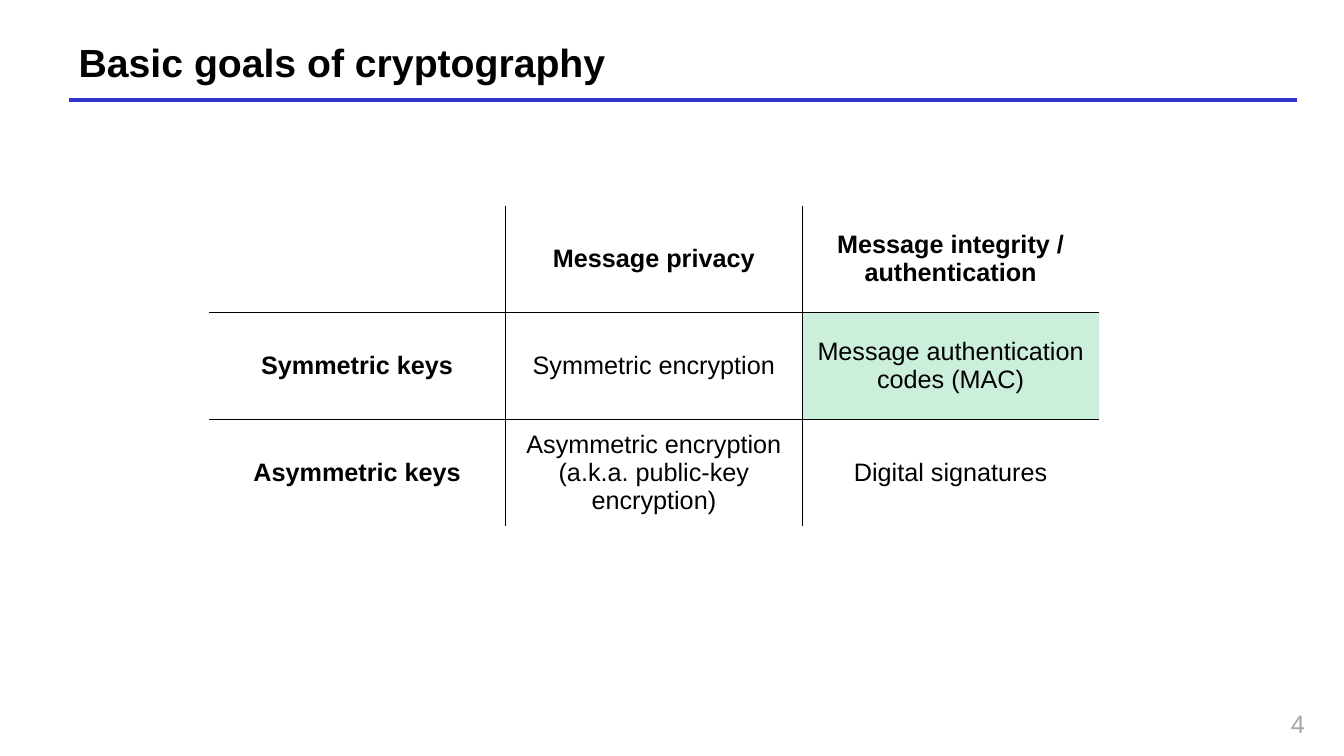
from lxml import etree
from pptx import Presentation
from pptx.dml.color import RGBColor
from pptx.enum.shapes import MSO_CONNECTOR
from pptx.enum.text import MSO_ANCHOR, MSO_AUTO_SIZE, PP_ALIGN
from pptx.oxml.ns import qn
from pptx.util import Inches, Pt

BLACK = RGBColor(0x00, 0x00, 0x00)
BLUE = RGBColor(0x33, 0x33, 0xCC)
GREEN = RGBColor(0x00, 0xB0, 0x50)
GREY = RGBColor(0xA6, 0xA6, 0xA6)
LEFT, CENTER, RIGHT = PP_ALIGN.LEFT, PP_ALIGN.CENTER, PP_ALIGN.RIGHT
MIDDLE, TOP = MSO_ANCHOR.MIDDLE, MSO_ANCHOR.TOP
STRAIGHT = MSO_CONNECTOR.STRAIGHT
NO_AUTOFIT = MSO_AUTO_SIZE.NONE
TITLE_ONLY = 5


def write(frame, text, size=18, bold=False, color=BLACK, align=CENTER):
    paragraph = frame.paragraphs[0]
    paragraph.alignment = align
    run = paragraph.add_run()
    run.text = text
    run.font.name = "Arial"
    run.font.size = Pt(size)
    run.font.bold = bold
    run.font.color.rgb = color


def set_border(cell, side, visible):
    line = etree.SubElement(cell._tc.get_or_add_tcPr(), qn(f"a:ln{side}"), w=str(Pt(1)))
    if visible:
        fill = etree.SubElement(line, qn("a:solidFill"))
        etree.SubElement(fill, qn("a:srgbClr"), val=str(BLACK))
    else:
        etree.SubElement(line, qn("a:noFill"))


prs = Presentation()
prs.slide_width = Inches(13.33)
prs.slide_height = Inches(7.5)
slide = prs.slides.add_slide(prs.slide_layouts[TITLE_ONLY])

rule = slide.shapes.add_connector(STRAIGHT, Inches(0.68), Inches(0.99), Inches(12.86), Inches(0.99))
rule.line.color.rgb = BLUE
rule.line.width = Pt(3)
etree.SubElement(rule._element.spPr, qn("a:effectLst"))

title = slide.shapes.title
title.left, title.top = Inches(0.68), Inches(0.36)
title.width, title.height = Inches(12.18), Inches(0.5)
title.text_frame.auto_size = NO_AUTOFIT
title.text_frame.vertical_anchor = MIDDLE
write(title.text_frame, "Basic goals of cryptography", size=28, bold=True, align=LEFT)

page_number = slide.shapes.add_textbox(Inches(10.26), Inches(6.98), Inches(2.78), Inches(0.36))
page_number.text_frame.word_wrap = True
page_number.text_frame.vertical_anchor = TOP
write(page_number.text_frame, "4", color=GREY, align=RIGHT)

goals = [
    ["", "Message privacy", "Message integrity / authentication"],
    ["Symmetric keys", "Symmetric encryption", "Message authentication codes (MAC)"],
    ["Asymmetric keys", "Asymmetric encryption (a.k.a. public-key encryption)", "Digital signatures"],
]
last = len(goals) - 1
goals_table = slide.shapes.add_table(
    3, 3, Inches(2.07), Inches(2.04), Inches(8.83), Inches(3.18)
).table
goals_table.first_row = False
goals_table.horz_banding = False

for r, row in enumerate(goals):
    goals_table.rows[r].height = Inches(1.06)
    for c, goal in enumerate(row):
        cell = goals_table.cell(r, c)
        cell.vertical_anchor = MIDDLE
        for side, visible in (("L", c > 0), ("R", c < last), ("T", r > 0), ("B", r < last)):
            set_border(cell, side, visible)
        cell.fill.background()
        if goal:
            write(cell.text_frame, goal, bold=r == 0 or c == 0)

mac_cell = goals_table.cell(1, 2)
mac_cell.fill.solid()
mac_cell.fill.fore_color.rgb = GREEN
mac_color = mac_cell._tc.tcPr.find(f"{qn('a:solidFill')}/{qn('a:srgbClr')}")
etree.SubElement(mac_color, qn("a:alpha"), val="20000")

prs.save("out.pptx")
